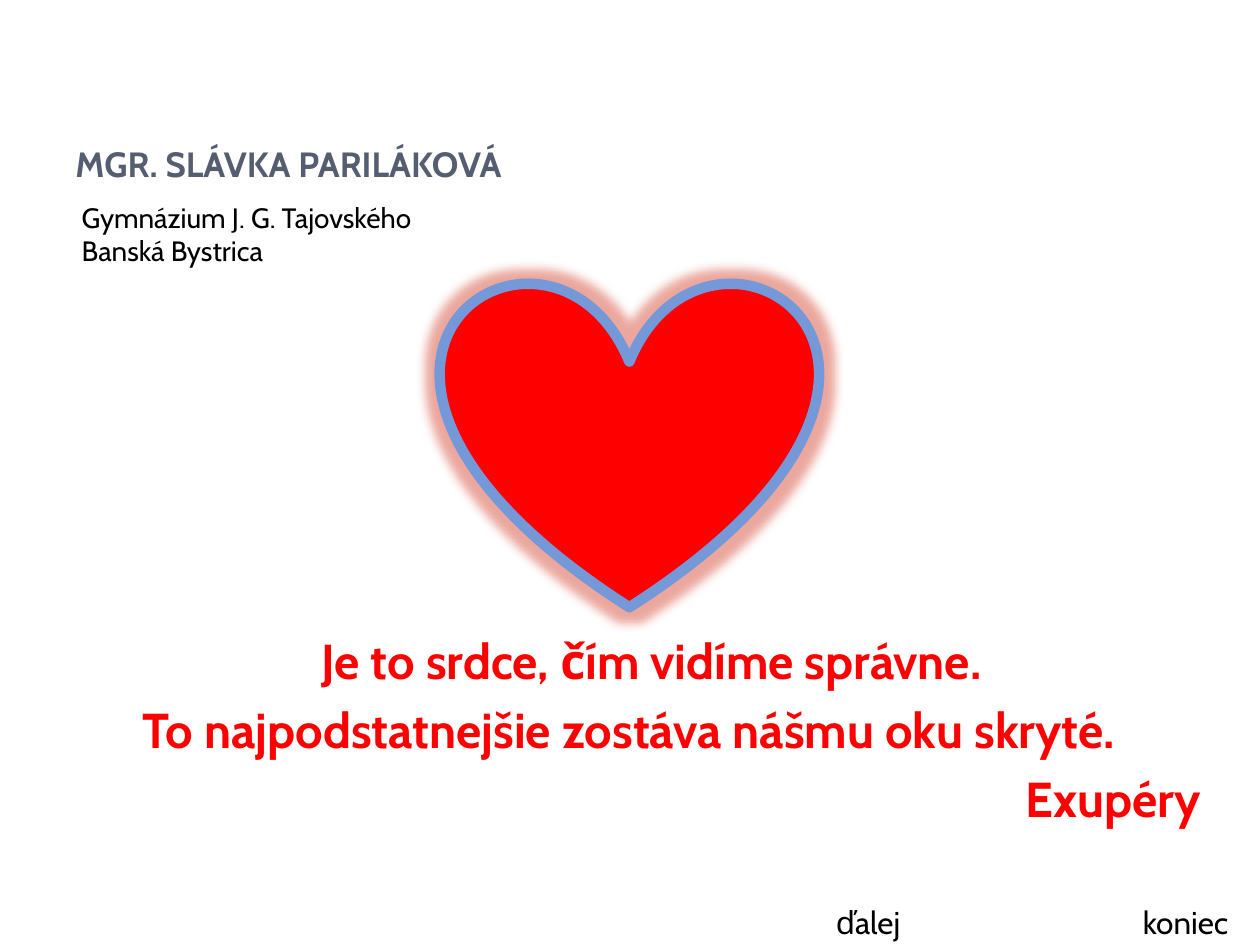
from lxml.etree import SubElement
from pptx import Presentation
from pptx.dml.color import RGBColor
from pptx.enum.shapes import MSO_SHAPE
from pptx.enum.text import MSO_ANCHOR, PP_ALIGN
from pptx.oxml.ns import qn
from pptx.util import Inches, Pt

RED, BLACK, WHITE = "FF0000", "000000", "FFFFFF"


def rgb(value):
    return RGBColor.from_string(value)


def set_all(obj, values):
    for name, value in values.items():
        setattr(obj, name, value)


class SlideBuilder:
    font = "Cabin"

    def __init__(self, slide):
        self.slide = slide

    def fill_text(self, tf, lines, size, color, bold=False, frame=None):
        """Each line is (text, paragraph format, left margin, right margin)."""
        set_all(tf, {"word_wrap": True, **(frame or {})})
        for i, (text, fmt, left, right) in enumerate(lines):
            p = tf.paragraphs[0] if i == 0 else tf.add_paragraph()
            set_all(p, fmt)
            pPr = p._p.get_or_add_pPr()
            pPr.set("marL", str(Inches(left)))
            pPr.set("marR", str(Inches(right)))
            r = p.add_run()
            r.text = text
            set_all(r.font, {"name": self.font, "size": Pt(size), "bold": bold})
            r.font.color.rgb = rgb(color)

    def text(self, box, lines, size, color, **style):
        sp = self.slide.shapes.add_textbox(*map(Inches, box))
        self.fill_text(sp.text_frame, lines, size, color, **style)

    def shape(self, kind, box, fill):
        sp = self.slide.shapes.add_shape(kind, *map(Inches, box))
        sp.shadow.inherit = False
        sp.fill.solid()
        sp.fill.fore_color.rgb = rgb(fill)
        sp.line.fill.background()
        return sp

    def heart(self, box, fill, line, width, glow, radius, alpha):
        sp = self.shape(MSO_SHAPE.HEART, box, fill)
        sp.line.color.rgb = rgb(line)
        sp.line.width = Pt(width)
        spPr = sp._element.spPr
        SubElement(spPr.find(qn("a:ln")), qn("a:round"))
        effects = spPr.find(qn("a:effectLst"))
        halo = SubElement(effects, qn("a:glow"), rad=str(Pt(radius)))
        clr = SubElement(halo, qn("a:srgbClr"), val=glow)
        SubElement(clr, qn("a:alpha"), val=str(alpha * 1000))

    def button(self, box, label):
        sp = self.shape(MSO_SHAPE.ROUNDED_RECTANGLE, box, WHITE)
        self.fill_text(sp.text_frame,
                       [(label, {"alignment": PP_ALIGN.CENTER}, 0, 0)],
                       18, BLACK, frame={"vertical_anchor": MSO_ANCHOR.MIDDLE})


def main():
    prs = Presentation()
    set_all(prs, {"slide_width": Inches(10), "slide_height": Inches(7.5)})
    s = SlideBuilder(prs.slides.add_slide(prs.slide_layouts[6]))

    # Author and school
    s.text((0.5, 0.24, 4.17, 1.27),
           [("MGR. SLÁVKA PARILÁKOVÁ", {"line_spacing": Pt(20)}, 0, 0)],
           20, "545E70", bold=True, frame={"vertical_anchor": MSO_ANCHOR.BOTTOM})
    s.text((0.5, 1.54, 4.17, 0.76),
           [("Gymnázium J. G. Tajovského", {}, 0.05, 0),
            ("Banská Bystrica", {}, 0.05, 0)], 16, BLACK)

    # Quotation, set below the heart by the top inset
    gap = {"space_before": Pt(6)}
    s.text((0.35, 2.18, 9.37, 4.52),
           [("Je to srdce, čím vidíme správne.",
             {"alignment": PP_ALIGN.CENTER}, 0.27, 0),
            ("To najpodstatnejšie zostáva nášmu oku skryté.",
             {"alignment": PP_ALIGN.CENTER, **gap}, 0, 0.09),
            ("Exupéry", {"alignment": PP_ALIGN.RIGHT, **gap}, 0, 0.09)],
           28, RED, bold=True, frame={"margin_top": Inches(2.82)})

    # Glowing heart
    s.heart((3.5, 2.22, 2.99, 2.6), RED, line="7598D9", width=6,
            glow="CD250C", radius=11, alpha=40)

    # Navigation buttons
    for left, label in ((8.86, "koniec"), (6.34, "ďalej")):
        s.button((left, 7.16, 1.1, 0.31), label)

    prs.save("out.pptx")


if __name__ == "__main__":
    main()
